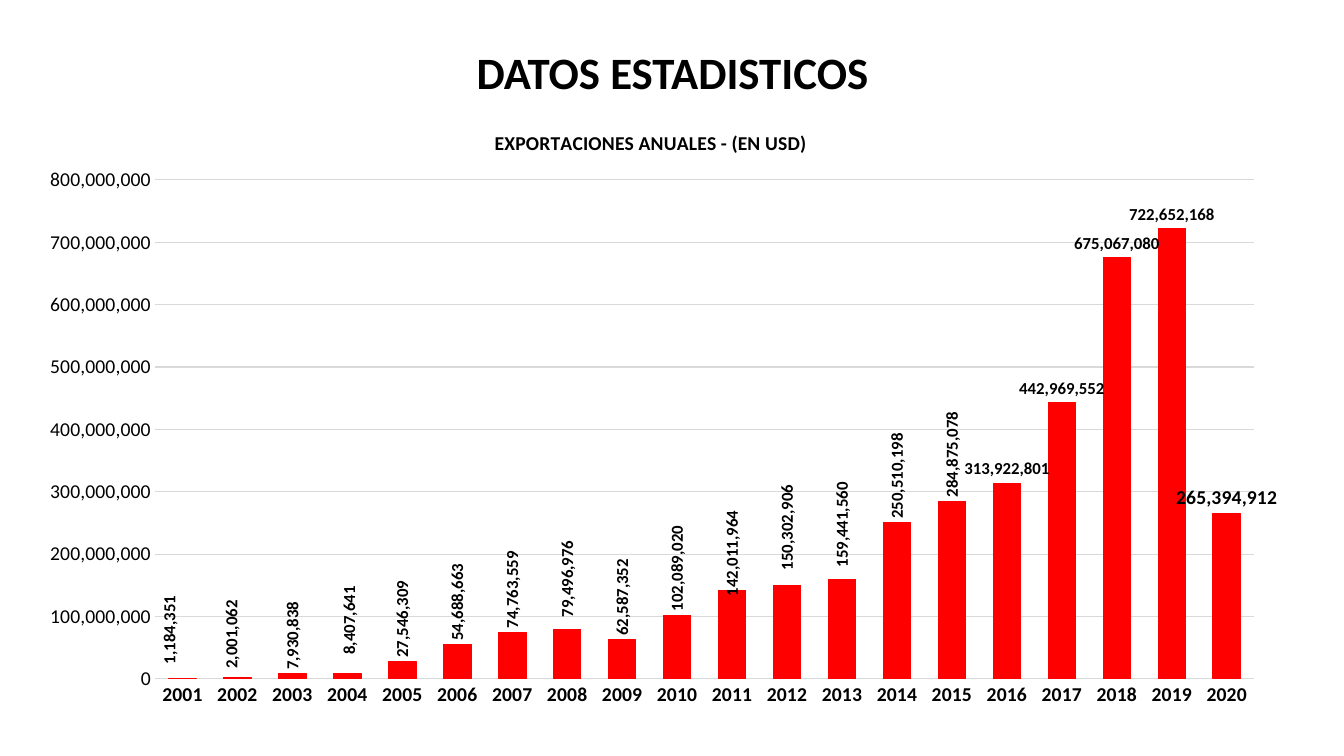
from lxml.etree import SubElement
from pptx import Presentation
from pptx.chart.data import CategoryChartData
from pptx.dml.color import RGBColor
from pptx.enum.chart import XL_CHART_TYPE, XL_LABEL_POSITION, XL_TICK_MARK
from pptx.enum.text import MSO_ANCHOR, PP_ALIGN
from pptx.oxml import parse_xml
from pptx.oxml.ns import nsdecls, qn
from pptx.util import Inches, Pt

TITLE = "DATOS ESTADISTICOS"
CHART_TITLE = "EXPORTACIONES ANUALES - (EN USD)"
FIRST_YEAR = 2001
EXPORTS = [
    1184351, 2001062, 7930838, 8407641, 27546309, 54688663, 74763559,
    79496976, 62587352, 102089020, 142011964, 150302906, 159441560,
    250510198, 284875078, 313922801, 442969552, 675067080, 722652168,
    265394912,
]
# year: label shift in px (right, down)
LABEL_SHIFTS = {2001: (-13, -10), 2002: (-6, -5), 2004: (2, -15),
                2008: (0, -8), 2011: (0, 10), 2012: (0, -11), 2013: (0, -8)}
FLAT_LABELS = {2016: 12, 2017: 12, 2018: 12, 2019: 12, 2020: 14}  # year: pt

COLORS = {"text": "000000", "bar": "FF0000", "rule": "D9D9D9"}
FONT = "Calibri"
PX = Inches(1) / 100.8
TITLE_BOX = (93, 2, 1159, 146)
CHART_BOX = (25, 103, 1255, 617)
PLOT_BOX = (155, 180, 1099, 499)
CHART_TITLE_AT = (491, 126)


def emu(box):
    return [round(v * PX) for v in box]


def rgb(name):
    return RGBColor.from_string(COLORS[name])


def style(font, size, bold=False):
    font.name, font.size, font.bold = FONT, Pt(size), bold
    font.color.rgb = rgb("text")


def rule(line, color):
    line.color.rgb = rgb(color)
    line.width = Pt(0.75)


def layout(x, y, w=None, h=None, mode="edge", target=None):
    """Manual chart layout from px measured within the chart."""
    node = parse_xml(f"<c:layout {nsdecls('c')}><c:manualLayout/></c:layout>")
    parts = {"layoutTarget": target}
    if mode == "edge":
        parts.update(xMode=mode, yMode=mode)
    sizes = {"x": (x, 2), "y": (y, 3), "w": (w, 2), "h": (h, 3)}
    parts.update({k: v / CHART_BOX[i] for k, (v, i) in sizes.items() if v is not None})
    for name, value in parts.items():
        if value is not None:
            SubElement(node[0], qn(f"c:{name}")).set("val", str(value))
    return node


def in_chart(x, y):
    return x - CHART_BOX[0], y - CHART_BOX[1]


def add_title(s):
    title = s.shapes.title
    title.left, title.top, title.width, title.height = emu(TITLE_BOX)
    tf = title.text_frame
    tf.text = TITLE
    tf.vertical_anchor = MSO_ANCHOR.MIDDLE
    p = tf.paragraphs[0]
    p.alignment, p.line_spacing = PP_ALIGN.CENTER, 0.9
    style(p.runs[0].font, 32, True)


def format_axes(chart):
    years, values = chart.category_axis, chart.value_axis
    for axis in (years, values):
        axis.major_tick_mark = axis.minor_tick_mark = XL_TICK_MARK.NONE
        style(axis.tick_labels.font, 14, axis is years)
    rule(years.format.line, "rule")
    values.format.line.fill.background()
    values.has_major_gridlines = True
    rule(values.major_gridlines.format.line, "rule")
    values.minimum_scale, values.maximum_scale = 0, 800_000_000
    values.major_unit = 100_000_000
    values.tick_labels.number_format = "#,##0"
    values.tick_labels.number_format_is_linked = False


def format_labels(chart, series):
    labels = series.data_labels
    labels.show_value = True
    labels.number_format, labels.number_format_is_linked = "#,##0", False
    labels.position = XL_LABEL_POSITION.OUTSIDE_END
    style(labels.font, 12, True)
    for year in sorted({*LABEL_SHIFTS, *FLAT_LABELS}):
        label = series.points[year - FIRST_YEAR].data_label
        style(label.font, FLAT_LABELS.get(year, 12), True)
        label.position = XL_LABEL_POSITION.OUTSIDE_END
    for body in chart.element.xpath(".//c:dLbls//a:bodyPr"):
        body.set("rot", "-5400000")
        body.set("vert", "horz")
    for idx in chart.element.xpath(".//c:dLbl/c:idx"):
        year = FIRST_YEAR + int(idx.get("val"))
        if year in FLAT_LABELS:
            idx.getparent().xpath(".//a:bodyPr")[0].set("rot", "0")
        if year in LABEL_SHIFTS:
            idx.addnext(layout(*LABEL_SHIFTS[year], mode="factor"))


def place(parent, node, after=None):
    for old in parent.findall(qn("c:layout")):
        parent.remove(old)
    if after is None:
        parent.insert(0, node)
    else:
        after.addnext(node)


def add_exports_chart(s):
    data = CategoryChartData(number_format="#,##0")
    data.categories = [str(FIRST_YEAR + i) for i in range(len(EXPORTS))]
    data.add_series("Series 1", EXPORTS)
    chart = s.shapes.add_chart(
        XL_CHART_TYPE.COLUMN_CLUSTERED, *emu(CHART_BOX), data).chart
    style(chart.font, 10)
    chart.has_legend = False
    chart.has_title = True
    tf = chart.chart_title.text_frame
    tf.text = CHART_TITLE
    style(tf.paragraphs[0].runs[0].font, 14, True)
    chart.chart_title.include_in_layout = False

    plot = chart.plots[0]
    plot.gap_width, plot.overlap, plot.vary_by_categories = 100, -24, False
    series = plot.series[0]
    series.format.fill.solid()
    series.format.fill.fore_color.rgb = rgb("bar")
    rule(series.format.line, "bar")
    format_axes(chart)
    format_labels(chart, series)

    title = chart.chart_title.element
    place(title, layout(*in_chart(*CHART_TITLE_AT)), title.find(qn("c:tx")))
    place(chart.element.xpath(".//c:plotArea")[0],
          layout(*in_chart(*PLOT_BOX[:2]), *PLOT_BOX[2:], target="inner"))


def main():
    prs = Presentation()
    prs.slide_width, prs.slide_height = Inches(13.33), Inches(7.5)
    s = prs.slides.add_slide(prs.slide_layouts[5])
    add_title(s)
    add_exports_chart(s)
    prs.save("out.pptx")


if __name__ == "__main__":
    main()
